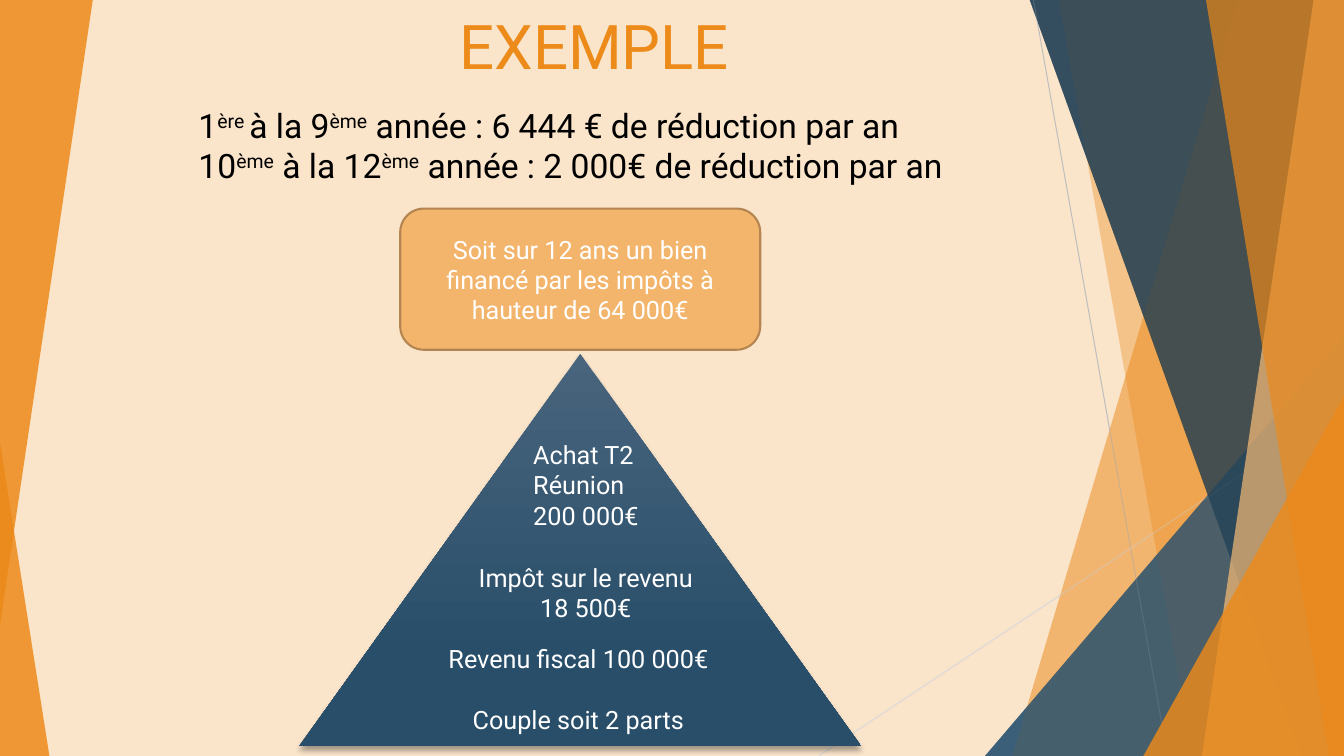
"""Build the tax reduction example slide."""
import pptx
import pptx.dml.color
import pptx.enum.shapes
import pptx.enum.text
import pptx.oxml
import pptx.oxml.ns
import pptx.util
from dataclasses import dataclass
from lxml import etree

Inches = pptx.util.Inches
Pt = pptx.util.Pt
SHAPE = pptx.enum.shapes.MSO_SHAPE
ALIGN = pptx.enum.text.PP_ALIGN
ANCHOR = pptx.enum.text.MSO_ANCHOR


@dataclass(frozen=True)
class Theme:
    font: str = "Roboto"
    background: str = "FAE4CA"
    orange: str = "EC8A1A"
    light_orange: str = "F4B976"
    blue: str = "2C5573"
    dark_blue: str = "214056"
    box_fill: str = "F3B46C"
    box_line: str = "B48550"
    pyramid_top: str = "49647D"
    pyramid_base: str = "284E69"
    black: str = "000000"
    white: str = "FFFFFF"
    title_size: int = 44
    summary_size: int = 24
    label_size: int = 18


THEME = Theme()
WIDTH, HEIGHT = 13.33, 7.5
PANEL_TOP = -0.01

TITLE = ("EXEMPLE", (1.65, 0, 8.49, 0.86))
SUMMARY_BOX = (1.87, 0.99, 7.88, 2.12)
SUMMARY = [
    [("1", False), ("ère ", True), ("à la 9", False), ("ème", True),
     (" année : 6 444 € de réduction par an", False)],
    [("10", False), ("ème", True), (" à la 12", False), ("ème", True),
     (" année : 2 000€ de réduction par an", False)],
]
RESULT = ("Soit sur 12 ans un bien financé par les impôts à hauteur de 64 000€",
          (3.97, 2.07, 3.57, 1.4))
PYRAMID_BOX = (2.97, 3.51, 5.57, 3.89)
PYRAMID_LABELS = [
    (["Couple soit 2 parts"], (4.59, 6.94, 3.96, 0.4), ALIGN.LEFT),
    (["Revenu fiscal 100 000€"], (4.35, 6.33, 3.96, 0.4), ALIGN.LEFT),
    (["Impôt sur le revenu 18 500€"], (4.49, 5.53, 2.64, 0.71), ALIGN.CENTER),
    (["Achat T2 Réunion", "200 000€"], (5.19, 4.31, 1.95, 1.01), ALIGN.LEFT),
]

RIGHT_FACETS = [
    ("panel", 12.28, 10.04, THEME.orange, 30),
    ("panel", 10.5, 11.83, THEME.orange, 20),
    ("corner", 9.77, 3.33, THEME.blue, 72),
    ("panel", 10.21, 12.91, THEME.dark_blue, 70),
    ("panel", 13.03, 11.92, THEME.light_orange, 70),
    ("panel", 11.96, 13.18, THEME.orange, 65),
    ("corner", 11.34, 3.93, THEME.orange, 80),
]
LEFT_LOW = ((0, 4.39, 0.49, 3.11), 0, 0)
LEFT_HIGH = ((0, 0, 0.92, 6.2), 1, 180)
LEFT_ALPHA = 85
RAYS = [
    ((10.25, 0), (11.58, 7.5), "BFBFBF"),
    ((WIDTH, 4.03), (8.12, 7.5), "D9D9D9"),
]


def rgb(color):
    return pptx.dml.color.RGBColor.from_string(color)


def inches(values):
    return [Inches(value) for value in values]


def paint(shape, color, alpha=100):
    shape.shadow.inherit = False
    shape.line.fill.background()
    shape.fill.solid()
    shape.fill.fore_color.rgb = rgb(color)
    if alpha < 100:
        color_element = shape.fill._xPr.find(".//" + pptx.oxml.ns.qn("a:srgbClr"))
        etree.SubElement(color_element, pptx.oxml.ns.qn("a:alpha")).set("val", str(alpha * 1000))


def style_paragraph(paragraph, size, color, alignment=ALIGN.LEFT):
    paragraph.alignment = alignment
    for run in paragraph.runs:
        run.font.name = THEME.font
        run.font.size = Pt(size)
        run.font.color.rgb = rgb(color)


def add_triangle(slide, box, apex, rotation, color, alpha):
    triangle = slide.shapes.add_shape(SHAPE.ISOSCELES_TRIANGLE, *inches(box))
    triangle.adjustments[0] = apex
    triangle.rotation = rotation
    paint(triangle, color, alpha)


def add_panel(slide, top_x, bottom_x, color, alpha):
    builder = slide.shapes.build_freeform(Inches(top_x), Inches(PANEL_TOP))
    corners = [(WIDTH, PANEL_TOP), (WIDTH, HEIGHT), (bottom_x, HEIGHT)]
    builder.add_line_segments([inches(corner) for corner in corners], close=True)
    paint(builder.convert_to_shape(), color, alpha)


def add_right_facets(slide):
    for kind, first, second, color, alpha in RIGHT_FACETS:
        if kind == "panel":
            add_panel(slide, first, second, color, alpha)
        else:
            box = (first, second, WIDTH - first, HEIGHT - second)
            add_triangle(slide, box, 1, 0, color, alpha)


def add_rays(slide):
    for start, end, color in RAYS:
        ray = slide.shapes.add_connector(
            pptx.enum.shapes.MSO_CONNECTOR.STRAIGHT, *inches(start + end))
        ray.line.color.rgb = rgb(color)
        ray.line.width = Pt(0.75)
        etree.SubElement(ray._element.spPr, pptx.oxml.ns.qn("a:effectLst"))


def add_decoration(slide):
    add_right_facets(slide)
    add_triangle(slide, *LEFT_LOW, THEME.orange, LEFT_ALPHA)
    add_rays(slide)
    add_right_facets(slide)
    add_triangle(slide, *LEFT_HIGH, THEME.orange, LEFT_ALPHA)


def add_title(slide):
    text, box = TITLE
    title = slide.shapes.title
    title.left, title.top, title.width, title.height = inches(box)
    title.text_frame.text = text
    title.text_frame.vertical_anchor = ANCHOR.BOTTOM
    style_paragraph(title.text_frame.paragraphs[0], THEME.title_size, THEME.orange, ALIGN.CENTER)


def add_pyramid(slide):
    pyramid = slide.shapes.add_shape(SHAPE.ISOSCELES_TRIANGLE, *inches(PYRAMID_BOX))
    pyramid.line.fill.background()
    pyramid.fill.gradient()
    pyramid.fill.gradient_angle = 270
    stops = [(0, THEME.pyramid_top), (0.78, THEME.pyramid_base)]
    for stop, (position, color) in zip(pyramid.fill.gradient_stops, stops):
        stop.position = position
        stop.color.rgb = rgb(color)
    pyramid._element.spPr.append(pptx.oxml.parse_xml(
        f'<a:effectLst {pptx.oxml.ns.nsdecls("a")}>'
        '<a:outerShdw blurRad="50800" dist="38100" dir="5400000" rotWithShape="0">'
        f'<a:srgbClr val="{THEME.black}"><a:alpha val="35000"/></a:srgbClr>'
        '</a:outerShdw></a:effectLst>'))
    for lines, box, alignment in PYRAMID_LABELS:
        frame = add_text_frame(slide, box)
        frame.text = "\n".join(lines)
        for paragraph in frame.paragraphs:
            style_paragraph(paragraph, THEME.label_size, THEME.white, alignment)


def add_text_frame(slide, box):
    frame = slide.shapes.add_textbox(*inches(box)).text_frame
    frame.word_wrap = True
    return frame


def add_summary(slide):
    frame = add_text_frame(slide, SUMMARY_BOX)
    for index, pieces in enumerate(SUMMARY):
        paragraph = frame.add_paragraph() if index else frame.paragraphs[0]
        for text, raised in pieces:
            run = paragraph.add_run()
            run.text = text
            if raised:
                run._r.get_or_add_rPr().set("baseline", "30000")
        style_paragraph(paragraph, THEME.summary_size, THEME.black)


def add_result(slide):
    text, box = RESULT
    result = slide.shapes.add_shape(SHAPE.ROUNDED_RECTANGLE, *inches(box))
    paint(result, THEME.box_fill)
    result.line.color.rgb = rgb(THEME.box_line)
    result.line.width = Pt(1.5)
    result.text_frame.text = text
    result.text_frame.word_wrap = True
    result.text_frame.vertical_anchor = ANCHOR.MIDDLE
    style_paragraph(result.text_frame.paragraphs[0], THEME.label_size, THEME.white, ALIGN.CENTER)


def main():
    presentation = pptx.Presentation()
    presentation.slide_width, presentation.slide_height = inches((WIDTH, HEIGHT))
    slide = presentation.slides.add_slide(presentation.slide_layouts[5])
    slide.background.fill.solid()
    slide.background.fill.fore_color.rgb = rgb(THEME.background)
    for add_part in (add_decoration, add_title, add_pyramid, add_summary, add_result):
        add_part(slide)
    presentation.save("out.pptx")


if __name__ == "__main__":
    main()
